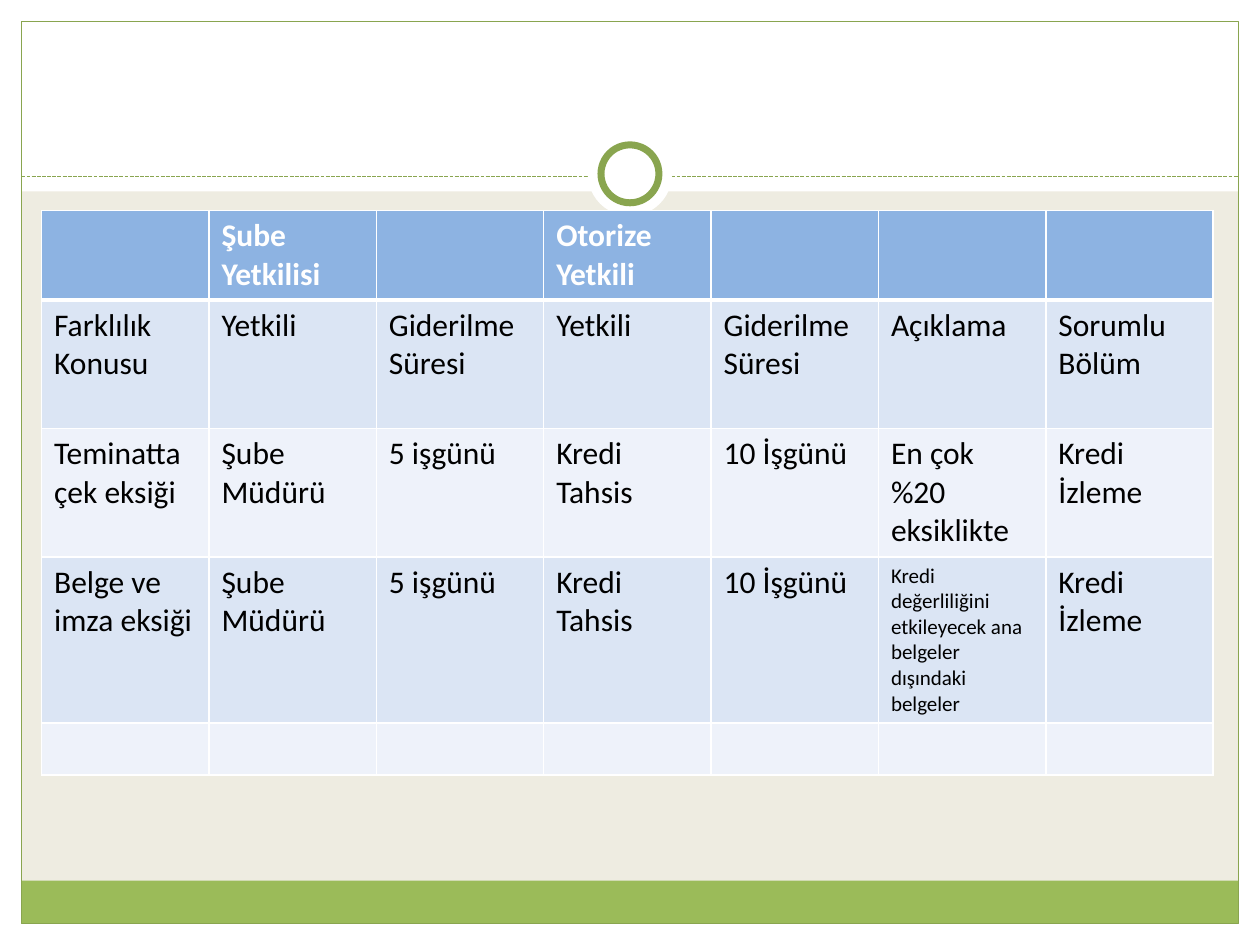
from itertools import product

from lxml.etree import SubElement
from pptx import Presentation
from pptx.dml.color import RGBColor
from pptx.enum.dml import MSO_LINE
from pptx.enum.shapes import MSO_CONNECTOR, MSO_SHAPE
from pptx.oxml import parse_xml
from pptx.oxml.ns import nsdecls, qn
from pptx.util import Inches, Pt

THEME = {
    "page": "EEECE1", "white": "FFFFFF", "band": "9BBB59", "outline": "89A54F",
    "header": "8DB3E2", "odd": "DBE5F4", "even": "EEF2FA", "text": "000000",
    "font": "Calibri", "size": 18, "small": 12,
}
WIDTH, HEIGHT = 10, 7.5
MARGIN = 0.17
INNER_W, INNER_H = WIDTH - 2 * MARGIN, HEIGHT - 2 * MARGIN
BAND_H = 2 * MARGIN


def color(role):
    return RGBColor.from_string(THEME[role])


def add_part(kind, box, fill=None, line_width=0):
    part = slide.shapes.add_shape(kind, *map(Inches, box))
    part.shadow.inherit = False
    if fill:
        part.fill.solid()
        part.fill.fore_color.rgb = color(fill)
    else:
        part.fill.background()
    if line_width:
        part.line.color.rgb = color("outline")
        part.line.width = Pt(line_width)
    else:
        part.line.fill.background()


prs = Presentation()
prs.slide_width, prs.slide_height = Inches(WIDTH), Inches(HEIGHT)
slide = prs.slides.add_slide(prs.slide_layouts[6])
slide.background.fill.solid()
slide.background.fill.fore_color.rgb = color("page")

# White margins, title area and green footer band
for box, fill in [
    ((0, HEIGHT - MARGIN, WIDTH, MARGIN), "white"),
    ((0, 0, WIDTH, 1.52), "white"),
    ((0, 0, MARGIN, HEIGHT), "white"),
    ((WIDTH - MARGIN, 0, MARGIN, HEIGHT), "white"),
    ((MARGIN, HEIGHT - MARGIN - BAND_H, INNER_W, BAND_H), "band"),
]:
    add_part(MSO_SHAPE.RECTANGLE, box, fill)

# Frame and dashed title rule
add_part(MSO_SHAPE.RECTANGLE, (MARGIN, MARGIN, INNER_W, INNER_H), line_width=0.75)
title_rule = slide.shapes.add_connector(
    MSO_CONNECTOR.STRAIGHT, Inches(MARGIN), Inches(1.4), Inches(WIDTH - MARGIN), Inches(1.4))
title_rule.line.color.rgb = color("outline")
title_rule.line.width = Pt(0.75)
title_rule.line.dash_style = MSO_LINE.SQUARE_DOT
SubElement(title_rule.element.spPr, qn("a:effectLst"))

# Ring centred on the slide's width
for diameter, line_width in [(0.67, 0), (0.46, 4)]:
    ring_box = (WIDTH / 2 - diameter / 2, 1.38 - diameter / 2, diameter, diameter)
    add_part(MSO_SHAPE.OVAL, ring_box, "white", line_width)

# Discrepancy table
ENTRIES = [
    ["", "Şube Yetkilisi", "", "Otorize Yetkili", "", "", ""],
    ["Farklılık Konusu", "Yetkili", "Giderilme Süresi", "Yetkili", "Giderilme Süresi",
     "Açıklama", "Sorumlu Bölüm"],
    ["Teminatta çek eksiği", "Şube Müdürü", "5 işgünü", "Kredi Tahsis", "10 İşgünü",
     "En çok %20 eksiklikte", "Kredi İzleme"],
    ["Belge ve imza eksiği", "Şube Müdürü", "5 işgünü", "Kredi Tahsis", "10 İşgünü",
     "Kredi değerliliğini etkileyecek ana belgeler dışındaki belgeler", "Kredi İzleme"],
    [""] * 7,
]
ROW_HEIGHTS = [0.71, 1.02, 1.02, 1.32, 0.41]
SMALL_CELL = (3, 5)
rows, cols = len(ENTRIES), len(ENTRIES[0])
table = slide.shapes.add_table(
    rows, cols, Inches(0.33), Inches(1.67), Inches(9.3), Inches(sum(ROW_HEIGHTS))).table
for row, height in zip(table.rows, ROW_HEIGHTS):
    row.height = Inches(height)

for r, c in product(range(rows), range(cols)):
    cell = table.cell(r, c)
    cell.fill.solid()
    cell.fill.fore_color.rgb = color("header" if r == 0 else "odd" if r % 2 else "even")

    # White borders, thicker below the header
    for place, side in enumerate("LRTB"):
        thick = (r, side) in [(0, "B"), (1, "T")]
        border = parse_xml(
            f'<a:ln{side} {nsdecls("a")} w="{Pt(3 if thick else 1)}"><a:solidFill>'
            f'<a:srgbClr val="{THEME["white"]}"/></a:solidFill></a:ln{side}>')
        cell._tc.get_or_add_tcPr().insert(place, border)

    paragraph = cell.text_frame.paragraphs[0]
    size = THEME["small" if (r, c) == SMALL_CELL else "size"]
    if ENTRIES[r][c]:
        paragraph.add_run().text = ENTRIES[r][c]
    for target in (paragraph, *paragraph.runs):
        for name, value in {"name": THEME["font"], "size": Pt(size), "bold": r == 0}.items():
            setattr(target.font, name, value)
        target.font.color.rgb = color("text" if r else "white")

prs.save("out.pptx")
